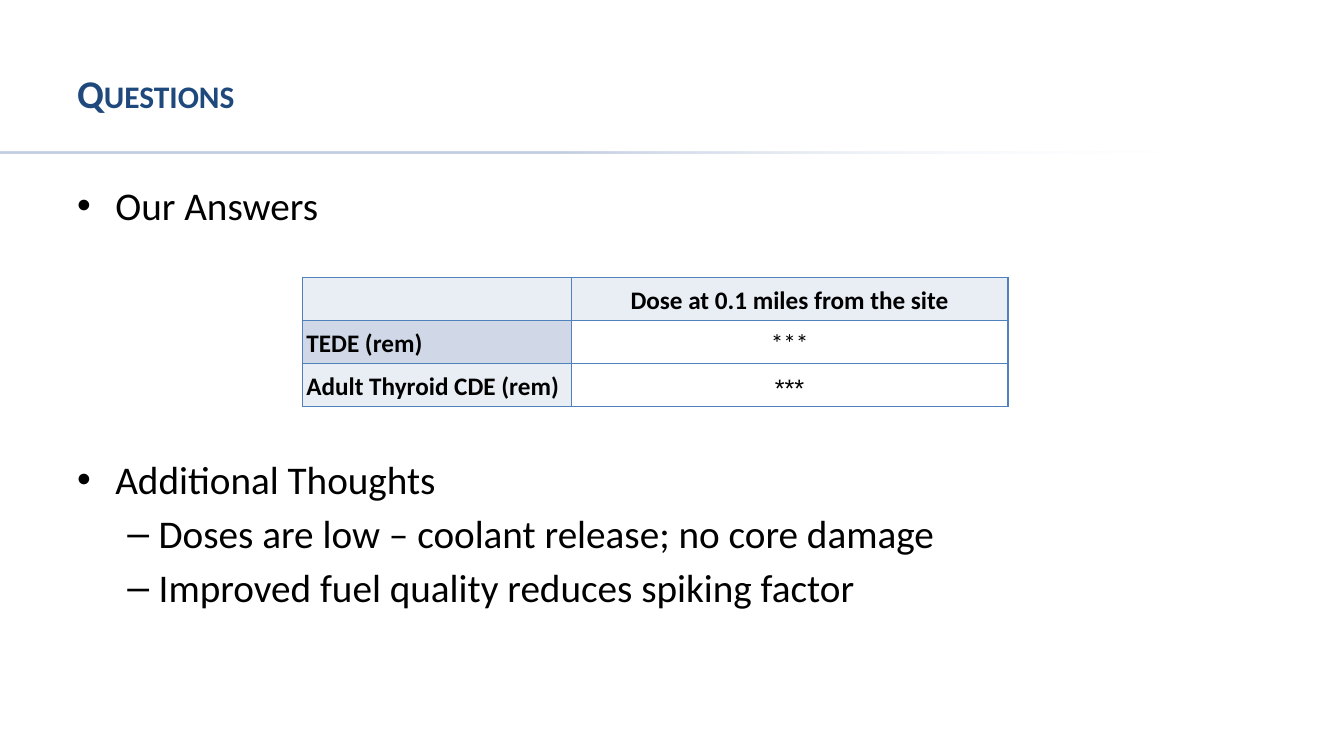
from lxml.etree import SubElement
from pptx import Presentation
from pptx.dml.color import RGBColor
from pptx.enum.shapes import MSO_SHAPE
from pptx.enum.text import MSO_ANCHOR, PP_ALIGN
from pptx.oxml import parse_xml
from pptx.oxml.ns import nsdecls, qn
from pptx.util import Inches, Pt

COLUMN = Inches(1 / 3)
ROW = Inches(0.25)
ANSWERS = [
    ("", "Dose at 0.1 miles from the site"),
    ("TEDE (rem)", "***"),
    ("Adult Thyroid CDE (rem)", "***"),
]
LABEL_FILLS = ["E9EDF4", "D0D8E8", "E9EDF4"]
BULLETS = [
    ("Our Answers", "•", 0.38, 0.38, 0),
    ("Additional Thoughts", "•", 0.38, 0.38, 162),
    ("Doses are low – coolant release; no core damage", "–", 0.81, 0.31, 5),
    ("Improved fuel quality reduces spiking factor", "–", 0.81, 0.31, 5),
]


def color(value):
    """Turn a hex string into a colour."""
    return RGBColor.from_string(value)


def grid(left, top, width, height):
    """Convert grid columns and rows into slide lengths."""
    return [int(left * COLUMN), int(top * ROW), int(width * COLUMN), int(height * ROW)]


def style(para, size, ink="000000", bold=False, font="Calibri"):
    """Format every run of a paragraph."""
    for span in para.runs:
        span.font.name = font
        span.font.size = Pt(size)
        span.font.bold = bold
        span.font.color.rgb = color(ink)


def add_rule(page):
    """Draw the line under the title, fading out to the right."""
    rule = page.shapes.add_shape(MSO_SHAPE.RECTANGLE, *grid(-0.06, 6, 34.8, 0.1))
    rule.shadow.inherit = False
    rule.line.fill.background()
    fade = parse_xml(
        f'<a:gradFill {nsdecls("a")}><a:gsLst>'
        '<a:gs pos="48000"><a:srgbClr val="3C619E"><a:alpha val="31000"/></a:srgbClr></a:gs>'
        '<a:gs pos="100000"><a:srgbClr val="E1E8F5"><a:alpha val="0"/></a:srgbClr></a:gs>'
        '</a:gsLst><a:lin ang="0" scaled="0"/></a:gradFill>'
    )
    rule.element.spPr.find(qn("a:prstGeom")).addnext(fade)


def add_title(page, text):
    """Add the slide title in small capitals."""
    box = page.shapes.add_textbox(*grid(2, 1.2, 36, 5))
    frame = box.text_frame
    frame.word_wrap = True
    frame.vertical_anchor = MSO_ANCHOR.MIDDLE
    frame.text = text
    para = frame.paragraphs[0]
    style(para, 28, "1F497D", True)
    para.runs[0].font._element.set("cap", "small")


def add_bullets(page, bullets):
    """Add the bulleted body, leaving room for the table."""
    frame = page.shapes.add_textbox(*grid(2, 7, 36, 21.68)).text_frame
    frame.word_wrap = True
    for index, (text, mark, margin, hanging, gap) in enumerate(bullets):
        para = frame.add_paragraph() if index else frame.paragraphs[0]
        para.text = text
        para.space_before = Pt(gap)
        style(para, 28)
        props = para._p.get_or_add_pPr()
        props.set("marL", str(Inches(margin)))
        props.set("indent", str(-Inches(hanging)))
        SubElement(props, qn("a:buFont"), typeface="Arial")
        SubElement(props, qn("a:buChar"), char=mark)


def add_borders(cell, ink):
    """Outline a cell with one-point lines placed before its fill."""
    props = cell._tc.get_or_add_tcPr()
    for index, side in enumerate(("lnL", "lnR", "lnT", "lnB")):
        line = parse_xml(
            f'<a:{side} {nsdecls("a")} w="{Pt(1)}"><a:solidFill>'
            f'<a:srgbClr val="{ink}"/></a:solidFill></a:{side}>'
        )
        props.insert(index, line)


def fill_cell(cell, text, fill, align, bold, font):
    """Write and format one table cell."""
    cell.fill.solid()
    cell.fill.fore_color.rgb = color(fill)
    cell.vertical_anchor = MSO_ANCHOR.BOTTOM
    cell.margin_left = cell.margin_right = Inches(0.04)
    cell.margin_top = cell.margin_bottom = Inches(0.04)
    cell.text = text
    para = cell.text_frame.paragraphs[0]
    para.alignment = align
    para.line_spacing = 1.15
    style(para, 18, bold=bold, font=font)
    add_borders(cell, "4F81BD")


def add_answers(page, answers):
    """Add the dose table."""
    table = page.shapes.add_table(len(answers), 2, *grid(9, 11, 21, 5.13)).table
    for column, width in zip(table.columns, (8, 13)):
        column.width = width * COLUMN
    last = len(answers) - 1
    for row, (label, dose) in enumerate(answers):
        header = row == 0
        dose_fill = LABEL_FILLS[0] if header else "FFFFFF"
        dose_font = "Arial" if row == last else "Calibri"
        fill_cell(table.cell(row, 0), label, LABEL_FILLS[row], PP_ALIGN.LEFT, True, "Calibri")
        fill_cell(table.cell(row, 1), dose, dose_fill, PP_ALIGN.CENTER, header, dose_font)


def main():
    """Build and save the slide."""
    deck = Presentation()
    deck.slide_width = 40 * COLUMN
    deck.slide_height = 30 * ROW
    page = deck.slides.add_slide(deck.slide_layouts[6])
    add_rule(page)
    add_title(page, "Questions")
    add_bullets(page, BULLETS)
    add_answers(page, ANSWERS)
    deck.save("out.pptx")


if __name__ == "__main__":
    main()
